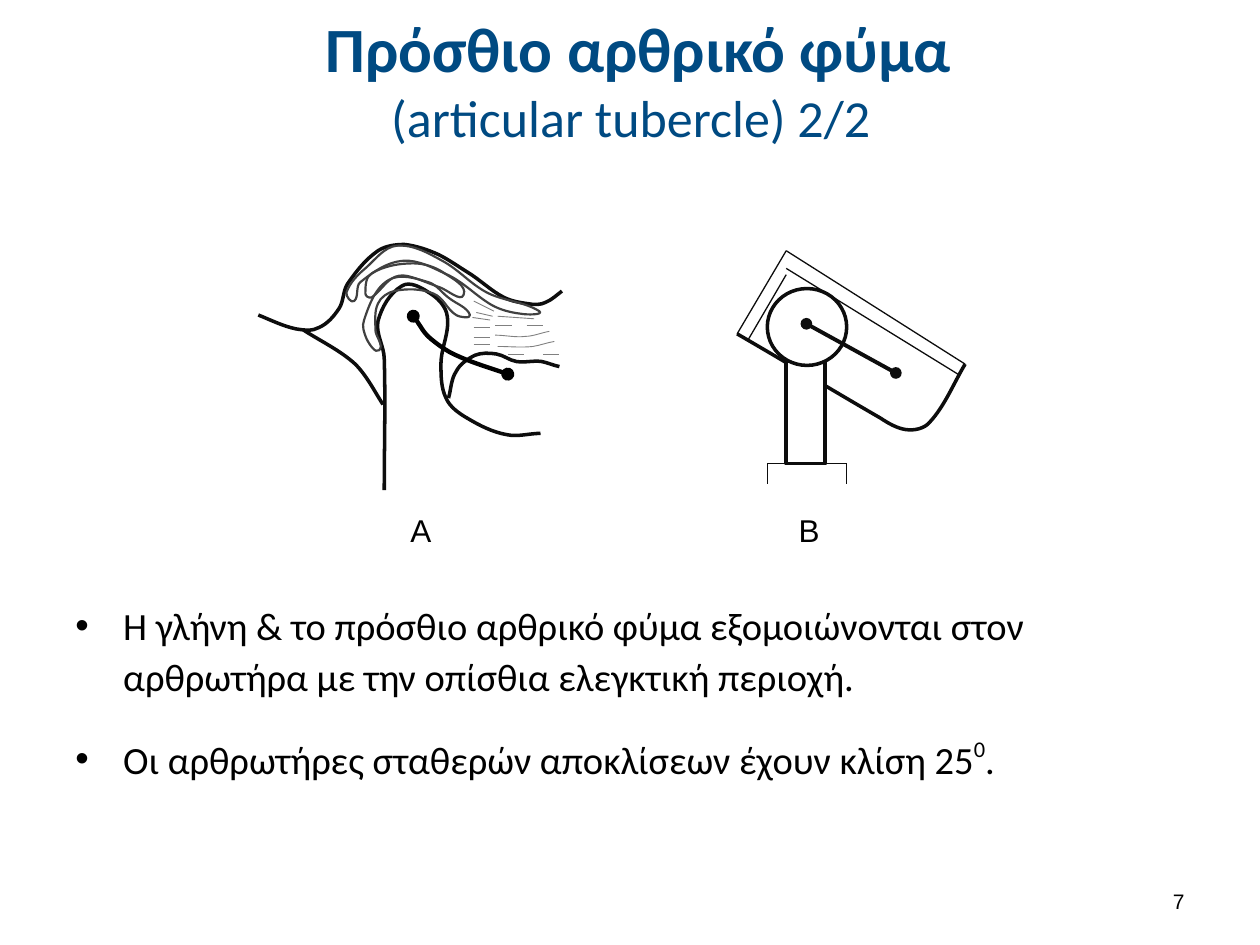
from dataclasses import dataclass
from math import dist

from lxml.etree import SubElement
from pptx import Presentation
from pptx.dml.color import RGBColor
from pptx.enum.shapes import MSO_CONNECTOR as Connector, MSO_SHAPE as Preset
from pptx.enum.text import MSO_ANCHOR as Anchor, PP_ALIGN as Align
from pptx.oxml.ns import qn
from pptx.util import Pt

PX = 9144
INK, TISSUE, FIBRE = "0D0D0D", "404040", "808080"
BLACK, WHITE, NAVY = "000000", "FFFFFF", "004A82"


@dataclass
class Curve:
    knots: tuple
    color: str = INK
    width: float = 2
    closed: bool = False
    dots: bool = False


@dataclass
class Segment:
    start: tuple
    end: tuple
    color: str = INK
    width: float = 0.75
    dots: bool = False


@dataclass
class Span:
    text: str
    size: float
    font: str = "Calibri"
    color: str = BLACK
    bold: bool = False
    baseline: int = 0


CONDYLE = ((305, 389), (305, 285), (300, 255), (319, 227), (340, 232), (355, 251),
           (350, 289), (354, 316), (371, 332), (402, 345), (429, 344))
NECK = ((304, 321), (282, 289), (241, 262))
FOSSA = ((205, 250), (235, 261), (253, 260), (269, 245), (276, 225), (300, 199), (321, 194),
         (348, 202), (371, 216), (400, 236), (419, 241), (433, 240), (446, 231))
UPPER_DISC = ((275, 232), (281, 239), (286, 224), (320, 207), (355, 218), (390, 242),
              (413, 249), (428, 247), (386, 232), (351, 207), (315, 195), (290, 213))
MIDDLE_DISC = ((295, 236), (311, 221), (323, 219), (349, 228), (368, 234),
               (353, 217), (328, 209), (295, 217), (290, 233))
LOWER_DISC = ((298, 262), (301, 278), (291, 269), (289, 254), (309, 222), (340, 224),
              (357, 237), (373, 250), (362, 250), (344, 233), (313, 231), (300, 241))
LOWER_RIM = ((356, 316), (362, 295), (377, 282), (394, 281), (410, 287), (430, 287), (444, 291))
LONG_FIBRES = (((393, 266), (417, 267), (436, 263)), ((395, 275), (423, 275), (440, 271)))
SLANTED_FIBRES = (((395, 251), (424, 253)), ((376, 239), (392, 247)),
                  ((378, 248), (391, 251)), ((375, 252), (389, 254)))
FLAT_FIBRES = ((376, 260), (376, 268), (376, 273), (393, 258), (418, 258), (403, 281), (431, 281))
FIBRE_LENGTH = 13
CONDYLE_AXIS = ((328, 251), (342, 269), (362, 282), (403, 297))

HEEL, TOP, TOE = (585, 265), (624, 199), (766, 289)
UPPER_ARM = (HEEL, (699, 332), (719, 341), (738, 335), TOE)
ARM_LINES = ((HEEL, TOP), (TOE, TOP), ((593, 271), (624, 218)), ((624, 213), (762, 298)))
BASE_LEFT, BASE_RIGHT, BASE_TOP, BASE_BOTTOM = 609, 672, 368, 384


def rgb(value: str) -> RGBColor:
    return RGBColor.from_string(value)


def style_line(shape, color: str, width: float, dots: bool = False) -> None:
    shape.line.color.rgb = rgb(color)
    shape.line.width = Pt(width)
    if dots:
        outline = shape.element.spPr.find(qn("a:ln"))
        for end in ("a:headEnd", "a:tailEnd"):
            SubElement(outline, qn(end), type="oval")


def smooth_points(knots: tuple, closed: bool) -> list:
    last = len(knots) - 1

    def knot(index: int) -> tuple:
        return knots[index % len(knots)] if closed else knots[min(max(index, 0), last)]

    def handle(index: int, other: int) -> tuple:
        before, after = knot(index - 1), knot(index + 1)
        reach = dist(knot(index), knot(other)) / 3 / dist(before, after) * (other - index)
        return tuple(round(at + reach * (b - a))
                     for at, a, b in zip(knot(index), before, after))

    points = []
    for index in range(last + closed):
        points += [handle(index, index + 1), handle(index + 1, index), knot(index + 1)]
    return points


def draw_curve(group, curve: Curve) -> None:
    builder = group.shapes.build_freeform(*curve.knots[0], scale=PX)
    builder.add_line_segments(smooth_points(curve.knots, curve.closed), close=False)
    shape = builder.convert_to_shape()
    shape.shadow.inherit = False
    shape.fill.background()
    style_line(shape, curve.color, curve.width, curve.dots)
    route = next(shape.element.iter(qn("a:path")))
    steps = route.findall(qn("a:lnTo"))
    for first in range(0, len(steps), 3):
        bezier = SubElement(route, qn("a:cubicBezTo"))
        for step in steps[first:first + 3]:
            bezier.append(step[0])
            route.remove(step)
    if curve.closed:
        SubElement(route, qn("a:close"))


def draw_segment(group, segment: Segment) -> None:
    ends = (value * PX for value in segment.start + segment.end)
    line = group.shapes.add_connector(Connector.STRAIGHT, *ends)
    style_line(line, segment.color, segment.width, segment.dots)
    SubElement(line.element.spPr, qn("a:effectLst"))


def draw_solid(group, preset, *bounds: int) -> None:
    shape = group.shapes.add_shape(preset, *(value * PX for value in bounds))
    shape.shadow.inherit = False
    shape.fill.solid()
    shape.fill.fore_color.rgb = rgb(WHITE)
    style_line(shape, INK, 2)


def draw_joint(page) -> None:
    joint = page.shapes.add_group_shape()
    for knots in (CONDYLE, NECK, FOSSA):
        draw_curve(joint, Curve(knots))
    for knots in (UPPER_DISC, MIDDLE_DISC, LOWER_DISC):
        draw_curve(joint, Curve(knots, TISSUE, 1.25, closed=True))
    draw_curve(joint, Curve(LOWER_RIM))
    for knots in LONG_FIBRES:
        draw_curve(joint, Curve(knots, FIBRE, 0.5))
    flat = tuple(((x, y), (x + FIBRE_LENGTH, y)) for x, y in FLAT_FIBRES)
    for start, end in SLANTED_FIBRES + flat:
        draw_segment(joint, Segment(start, end, FIBRE, 0.5))
    draw_curve(joint, Curve(CONDYLE_AXIS, BLACK, 2.5, dots=True))


def draw_hinge(page) -> None:
    hinge = page.shapes.add_group_shape()
    draw_curve(hinge, Curve(UPPER_ARM))
    draw_solid(hinge, Preset.RECTANGLE, 624, 287, 31, 81)
    draw_solid(hinge, Preset.OVAL, 609, 229, 63, 61)
    for start, end in ARM_LINES:
        draw_segment(hinge, Segment(start, end))
    draw_segment(hinge, Segment((BASE_LEFT, BASE_TOP), (BASE_RIGHT, BASE_TOP)))
    for x in (BASE_LEFT, BASE_RIGHT):
        draw_segment(hinge, Segment((x, BASE_TOP), (x, BASE_BOTTOM)))
    draw_segment(hinge, Segment((640, 257), (711, 296), width=2.25, dots=True))


def add_span(para, span: Span) -> None:
    run = para.add_run()
    run.text = span.text
    run.font.size, run.font.name, run.font.bold = Pt(span.size), span.font, span.bold
    run.font.color.rgb = rgb(span.color)
    if span.baseline:
        run.font._element.set("baseline", str(span.baseline * 1000))


def add_box(page, bounds: tuple, spans: tuple = (), align=Align.LEFT,
            anchor=Anchor.TOP, wrap: bool = True):
    frame = page.shapes.add_textbox(*(value * PX for value in bounds)).text_frame
    frame.word_wrap, frame.vertical_anchor = wrap, anchor
    para = frame.paragraphs[0]
    para.alignment = align
    for index, span in enumerate(spans):
        if index:
            para.add_line_break()
        add_span(para, span)
    return frame


def add_bullets(page, bounds: tuple, items: tuple) -> None:
    frame = add_box(page, bounds)
    for index, spans in enumerate(items):
        para = frame.add_paragraph() if index else frame.paragraphs[0]
        para.line_spacing, para.space_before, para.space_after = 1.1, Pt(12), Pt(6)
        props = para._p.get_or_add_pPr()
        props.set("marL", str(38 * PX))
        props.set("indent", str(-38 * PX))
        SubElement(props, qn("a:buFont"), typeface="Arial")
        SubElement(props, qn("a:buChar"), char="•")
        for span in spans:
            add_span(para, span)


def main() -> None:
    deck = Presentation()
    deck.slide_width, deck.slide_height = 1000 * PX, 750 * PX
    page = deck.slides.add_slide(deck.slide_layouts[6])
    draw_joint(page)
    draw_hinge(page)
    add_box(page, (51, 13, 900, 99),
            (Span(" Πρόσθιο αρθρικό φύμα", 36, color=NAVY, bold=True),
             Span("(articular tubercle) 2/2", 29.7, color=NAVY)), Align.CENTER, Anchor.MIDDLE)
    add_bullets(page, (50, 469, 900, 213), (
        (Span("Η γλήνη & το πρόσθιο αρθρικό φύμα εξομοιώνονται στον "
              "αρθρωτήρα με την οπίσθια ελεγκτική περιοχή.", 22),),
        (Span("Οι αρθρωτήρες σταθερών αποκλίσεων έχουν κλίση 25", 22),
         Span("0", 22, baseline=44), Span(".", 22)),
    ))
    add_box(page, (717, 695, 233, 40), (Span("7", 12, "Arial"),), Align.RIGHT, Anchor.MIDDLE)
    for left, label in ((316, "Α"), (624, "Β")):
        add_box(page, (left, 401, 37, 40), (Span(label, 18, "Arial"),), wrap=False)
    deck.save("out.pptx")


if __name__ == "__main__":
    main()
